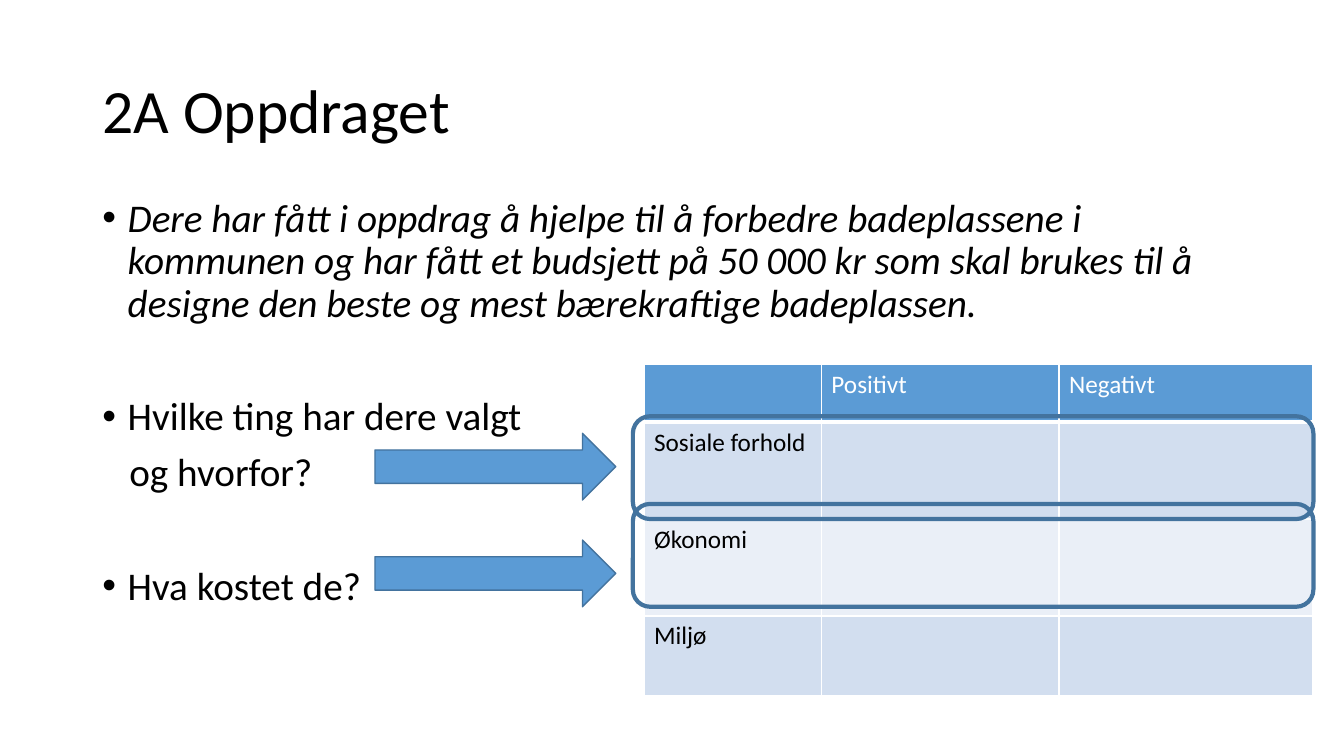
from lxml.etree import SubElement
from pptx import Presentation
from pptx.dml.color import RGBColor
from pptx.enum.shapes import MSO_SHAPE
from pptx.enum.text import MSO_ANCHOR
from pptx.oxml.ns import qn
from pptx.util import Cm, Pt

BLACK = RGBColor(0x00, 0x00, 0x00)
WHITE = RGBColor(0xFF, 0xFF, 0xFF)
BLUE = RGBColor(0x5B, 0x9B, 0xD5)
DARK_BLUE = RGBColor(0x43, 0x73, 0x9E)
BAND_DARK = RGBColor(0xD2, 0xDE, 0xEF)
BAND_LIGHT = RGBColor(0xEA, 0xEF, 0xF7)
FONT = "Calibri"

# Text, italic, bulleted, space before in points
TASKS = [
    ("Dere har fått i oppdrag å hjelpe til å forbedre badeplassene i kommunen "
     "og har fått et budsjett på 50 000 kr som skal brukes til å designe den "
     "beste og mest bærekraftige badeplassen.", True, True, 10),
    ("Hvilke ting har dere valgt", False, True, 50.8),
    ("og hvorfor?", False, False, 10),
    ("Hva kostet de?", False, True, 50.8),
]
ASSESSMENT = [
    ("", "Positivt", "Negativt"),
    ("Sosiale forhold", "", ""),
    ("Økonomi", "", ""),
    ("Miljø", "", ""),
]
COLUMN_WIDTHS = [4.47, 5.99, 6.38]
ROW_HEIGHTS = [1.45, 2.44, 2.44, 2.01]


def format_font(font, size, color=BLACK, italic=False):
    font.name = FONT
    font.size = Pt(size)
    font.color.rgb = color
    font.bold = False
    font.italic = italic


def add_text_frame(slide, left, top, width, height):
    box = slide.shapes.add_textbox(Cm(left), Cm(top), Cm(width), Cm(height))
    box.text_frame.word_wrap = True
    return box.text_frame


def add_title(slide, left, top, width, height):
    frame = add_text_frame(slide, left, top, width, height)
    frame.vertical_anchor = MSO_ANCHOR.MIDDLE
    frame.text = "2A Oppdraget"
    paragraph = frame.paragraphs[0]
    paragraph.line_spacing = 0.9
    format_font(paragraph.runs[0].font, 44)


def set_indent(paragraph, bulleted):
    properties = paragraph._p.get_or_add_pPr()
    properties.set("marL", str(Cm(0.64 if bulleted else 0.68)))
    properties.set("indent", str(Cm(-0.64 if bulleted else 0)))
    if bulleted:
        SubElement(properties, qn("a:buFont"), typeface="Arial")
        SubElement(properties, qn("a:buChar"), char="•")
    else:
        SubElement(properties, qn("a:buNone"))


def add_tasks(slide, left, top, width, height):
    frame = add_text_frame(slide, left, top, width, height)
    frame.text = "\n".join(task[0] for task in TASKS)
    for paragraph, (_, italic, bulleted, space) in zip(frame.paragraphs, TASKS):
        paragraph.line_spacing = 0.9
        paragraph.space_before = Pt(space)
        set_indent(paragraph, bulleted)
        format_font(paragraph.runs[0].font, 28, italic=italic)


def add_cell_borders(cell, widths):
    properties = cell._tc.get_or_add_tcPr()
    for side, width in widths.items():
        line = SubElement(properties, qn(f"a:ln{side}"), w=str(Pt(width)))
        fill = SubElement(line, qn("a:solidFill"))
        SubElement(fill, qn("a:srgbClr"), val=str(WHITE))


def add_assessment_table(slide, left, top):
    table = slide.shapes.add_table(
        len(ROW_HEIGHTS), len(COLUMN_WIDTHS), Cm(left), Cm(top),
        Cm(sum(COLUMN_WIDTHS)), Cm(sum(ROW_HEIGHTS))).table
    for column, width in zip(table.columns, COLUMN_WIDTHS):
        column.width = Cm(width)
    for index, (row, height) in enumerate(zip(table.rows, ROW_HEIGHTS)):
        row.height = Cm(height)
        header = index == 0
        band = BLUE if header else BAND_DARK if index % 2 else BAND_LIGHT
        for cell, text in zip(row.cells, ASSESSMENT[index]):
            cell.text = text
            format_font(cell.text_frame.paragraphs[0].font, 18,
                        WHITE if header else BLACK)
            for run in cell.text_frame.paragraphs[0].runs:
                format_font(run.font, 18, WHITE if header else BLACK)
            # Borders come before the fill in the cell properties
            add_cell_borders(cell, {"L": 1, "R": 1, "T": 3 if index == 1 else 1,
                                    "B": 3 if header else 1})
            cell.fill.solid()
            cell.fill.fore_color.rgb = band


def add_outlined_shape(slide, kind, left, top, width, height, line_width, fill=None):
    shape = slide.shapes.add_shape(kind, Cm(left), Cm(top), Cm(width), Cm(height))
    shape.shadow.inherit = False
    shape.line.color.rgb = DARK_BLUE
    shape.line.width = Pt(line_width)
    if fill is None:
        shape.fill.background()
    else:
        shape.fill.solid()
        shape.fill.fore_color.rgb = fill


def add_row_frames(slide, left, top, width, height, step):
    for index in range(2):
        add_outlined_shape(slide, MSO_SHAPE.ROUNDED_RECTANGLE, left,
                           top + index * step, width, height, 3)


def add_arrows(slide, left, top, width, height, step):
    for index in range(2):
        add_outlined_shape(slide, MSO_SHAPE.RIGHT_ARROW, left,
                           top + index * step, width, height, 1, BLUE)


def main():
    presentation = Presentation()
    presentation.slide_width = Cm(33.87)
    presentation.slide_height = Cm(19.05)
    slide = presentation.slides.add_slide(presentation.slide_layouts[6])

    # Title and task text
    add_title(slide, 2.33, 1.01, 29.21, 3.68)
    add_tasks(slide, 2.33, 4.88, 29.21, 12.09)
    # Table with its two highlighted rows
    add_assessment_table(slide, 16.23, 9.19)
    add_row_frames(slide, 15.95, 10.49, 17.15, 2.59, step=2.21)
    # Arrows from the questions to the rows
    add_arrows(slide, 9.45, 10.92, 6.07, 1.68, step=2.69)

    presentation.save("out.pptx")


if __name__ == "__main__":
    main()
